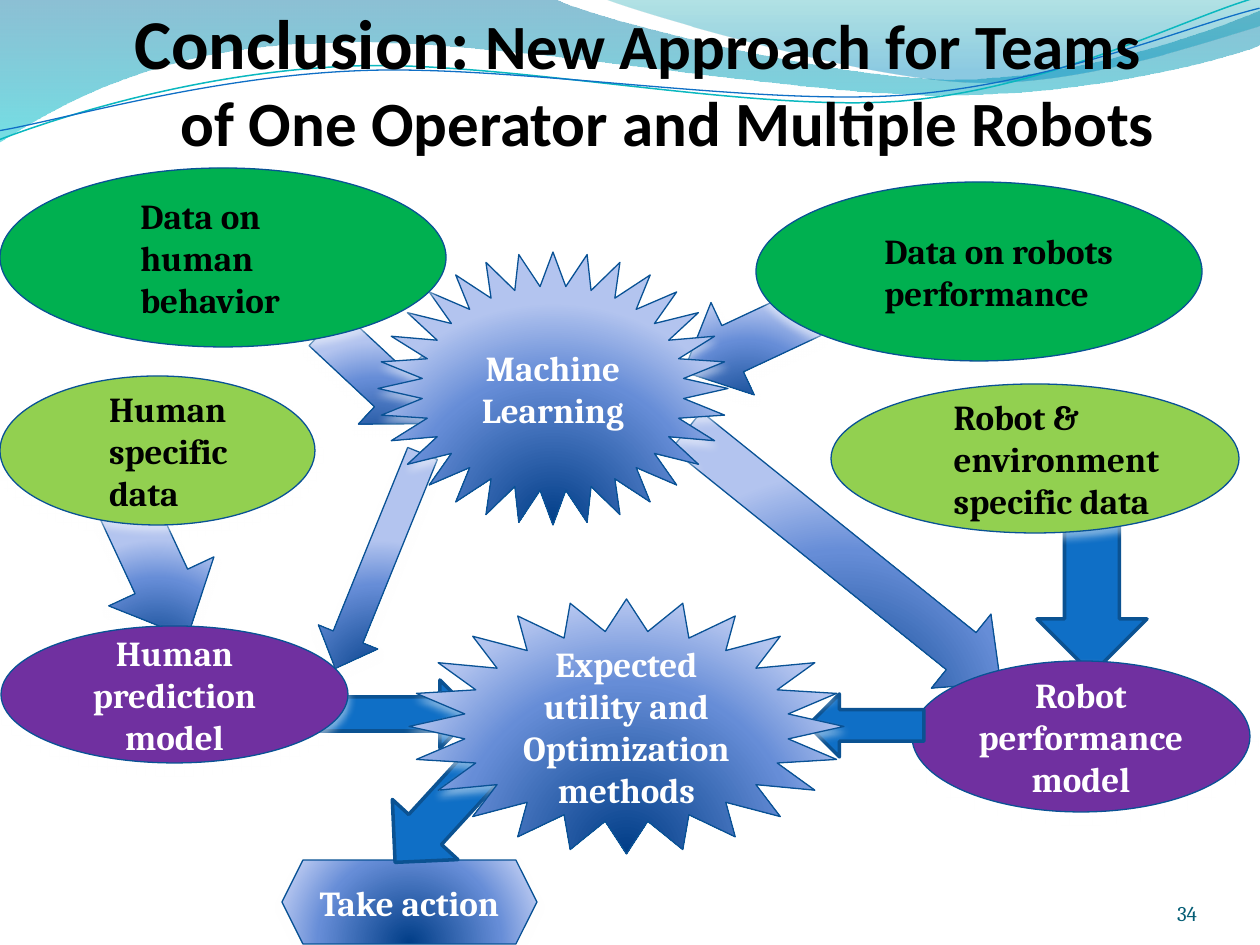
from lxml import etree
from pptx import Presentation
from pptx import util as u
from pptx.dml.color import RGBColor
from pptx.enum import shapes, text
from pptx.oxml import ns

EMU_PER_PX = 914400 / 126
COLORS = {
    "black": "000000", "white": "FFFFFF", "number": "045D75",
    "data": "00B050", "specific": "92D050", "model": "7030A0",
    "arrow": "0F6FC6", "arrow_edge": "0B5292", "edge": "095295",
    "shade": "FFFFFF", "teal_line": "0AB8BF", "blue_line": "0F6FC6",
}
GLOSS = [(0, "003D87", 100), (68, "668DD7", 100), (100, "B3C4EF", 100)]
WAVES = [
    ((0, 0), [[(554, -1)], [(600, 21), (837, 79), (955, 79)],
              [(1075, 79), (1207, 33), (1260, 11)], [(1261, 45)],
              [(1239, 55), (1096, 96), (940, 95)], [(784, 95), (481, 35), (324, 43)],
              [(163, 45), (58, 105), (-1, 142)], [(0, 0)]],
     [(0, "0074A1", 45), (100, "00C6CF", 55)]),
    ((604, -1), [[(641, 14), (859, 78), (969, 82)],
                 [(1079, 87), (1211, 40), (1260, 26)], [(1260, 0)], [(604, -1)]],
     [(0, "00A1A9", 30), (80, "008BBF", 45)]),
]
STRAND_TILT = 357.3
STRANDS = [
    ((-3, 110), [[(58, 90), (199, 52), (349, 53)], [(499, 53), (745, 118), (897, 114)],
                 [(1049, 109), (1184, 45), (1260, 27)]], "teal_line", 0.85),
    ((-3, 101), [[(57, 94), (207, 57), (357, 58)], [(508, 58), (750, 112), (902, 108)],
                 [(1053, 104), (1189, 52), (1262, 38)]], "blue_line", 0.75),
]
TITLE = [[("Conclusion: ", 40), ("New Approach for Teams \vof One Operator and Multiple Robots", 36)]]
PAGE_NUMBER = [[("34", 12)]]
DIAGRAM = [
    ("gloss", "DOWN_ARROW", (796, 355, 95, 403), 308.8, []),
    ("gloss", "DOWN_ARROW", (347, 445, 64, 232), 22.1, []),
    ("gloss", "HEXAGON", (282, 860, 255, 84), 0, ["Take action"]),
    ("gloss", "DOWN_ARROW", (696, 272, 102, 140), 64.9, []),
    ("data", "OVAL", (756, 182, 446, 179), 0, ["Data on robots performance"]),
    ("gloss", "DOWN_ARROW", (329, 306, 95, 140), 313, []),
    ("gloss", "DOWN_ARROW", (99, 500, 116, 144), 335, []),
    ("specific", "OVAL", (0, 376, 315, 149), 0, ["Human specific data"]),
    ("arrow", "DOWN_ARROW", (1037, 524, 110, 150), 0, []),
    ("specific", "OVAL", (831, 384, 408, 149), 0, ["Robot & environment specific data"]),
    ("model", "OVAL", (912, 661, 338, 151), 0, ["Robot performance model"]),
    ("arrow", "LEFT_ARROW", (808, 694, 116, 63), 0, []),
    ("arrow", "RIGHT_ARROW", (295, 680, 179, 68), 0, []),
    ("arrow", "LEFT_ARROW", (374, 770, 130, 89), 312.5, []),
    ("gloss", "STAR_32_POINT", (378, 252, 350, 273), 0, ["Machine Learning"]),
    ("model", "OVAL", (1, 626, 347, 137), 0, ["Human prediction model"]),
    ("data", "OVAL", (0, 168, 446, 179), 0, ["Data on human behavior"]),
    ("gloss", "STAR_24_POINT", (409, 599, 435, 255), 0,
     ["Expected utility and Optimization", "methods"]),
]


def px(value):
    return u.Emu(round(value * EMU_PER_PX))


def rgb(name):
    return RGBColor.from_string(COLORS[name])


def add_xml(parent, tag, **attributes):
    return etree.SubElement(parent, ns.qn(tag), {k: str(v) for k, v in attributes.items()})


def fill_gradient(shape, stops, radial):
    shape.fill.solid()
    properties = shape._element.spPr
    solid = properties.find(ns.qn("a:solidFill"))
    gradient = etree.Element(ns.qn("a:gradFill"), rotWithShape="1")
    stop_list = add_xml(gradient, "a:gsLst")
    for position, color, opacity in stops:
        stop = add_xml(stop_list, "a:gs", pos=position * 1000)
        tint = add_xml(stop, "a:srgbClr", val=color)
        if opacity < 100:
            add_xml(tint, "a:alpha", val=opacity * 1000)
    if radial:
        focus = add_xml(gradient, "a:path", path="circle")
        add_xml(focus, "a:fillToRect", l=50000, t=130000, r=50000, b=-30000)
    else:
        add_xml(gradient, "a:lin", ang=5400000, scaled=1)
    properties.replace(solid, gradient)


def add_shadow(shape):
    effects = shape._element.spPr.find(ns.qn("a:effectLst"))
    shadow = add_xml(effects, "a:outerShdw", blurRad=u.Pt(4.5), dist=u.Pt(3),
                     dir=5400000, rotWithShape=0)
    add_xml(add_xml(shadow, "a:srgbClr", val=COLORS["shade"]), "a:alpha", val=48000)


def write(shape, paragraphs, color="white", font="Cambria", bold=True, align="CENTER",
          anchor="MIDDLE", insets=(0, 6, 0, 6), indent=0):
    frame = shape.text_frame
    frame.word_wrap = True
    frame.vertical_anchor = text.MSO_ANCHOR[anchor]
    frame.margin_left, frame.margin_top, frame.margin_right, frame.margin_bottom = map(px, insets)
    for index, runs in enumerate(paragraphs):
        paragraph = frame.paragraphs[0] if index == 0 else frame.add_paragraph()
        paragraph.alignment = text.PP_ALIGN[align]
        if indent:
            paragraph.level = 1
            settings = paragraph._p.get_or_add_pPr()
            settings.set("marL", str(px(indent)))
            settings.set("indent", "0")
        for words, size in runs:
            for part, line in enumerate(words.split("\v")):
                if part:
                    paragraph.add_line_break()
                run = paragraph.add_run()
                run.text = line
                run.font.name, run.font.size, run.font.bold = font, u.Pt(size), bold
                run.font.color.rgb = rgb(color)


def trace(slide, start, segments, closed):
    builder = slide.shapes.build_freeform(px(start[0]), px(start[1]))
    points = [(px(x), px(y)) for segment in segments for x, y in segment]
    builder.add_line_segments(points, close=closed)
    shape = builder.convert_to_shape()
    shape.shadow.inherit = False
    steps = iter(list(shape._element.spPr.iter(ns.qn("a:lnTo"))))
    for segment in segments:
        group = [next(steps) for _ in segment]
        if len(group) == 3:
            curve = etree.Element(ns.qn("a:cubicBezTo"))
            group[0].addprevious(curve)
            for step in group:
                curve.append(step[0])
                step.getparent().remove(step)
    return shape


def add_part(slide, style, kind, box, rotation, lines):
    part = slide.shapes.add_shape(shapes.MSO_SHAPE[kind], *map(px, box))
    part.rotation = rotation
    part.shadow.inherit = False
    plain = style == "arrow"
    if style == "gloss":
        fill_gradient(part, GLOSS, radial=True)
        if kind == "DOWN_ARROW":
            part.adjustments[1] = 0.531
    else:
        part.fill.solid()
        part.fill.fore_color.rgb = rgb(style)
    part.line.color.rgb = rgb("arrow_edge" if plain else "edge")
    part.line.width = u.Pt(2 if plain else 0.75)
    if not plain:
        add_shadow(part)
    if lines:
        indented = style in ("data", "specific")
        layout = dict(color="black", align="LEFT", indent=63) if indented else {}
        if lines == ["Data on human behavior"]:
            layout["insets"] = (12, 6, 12, 6)
        write(part, [[(line, 20)] for line in lines], **layout)


def main():
    deck = Presentation()
    deck.slide_width, deck.slide_height = px(1260), px(945)
    slide = deck.slides.add_slide(deck.slide_layouts[6])
    for start, segments, stops in WAVES:
        wave = trace(slide, start, segments, closed=True)
        fill_gradient(wave, stops, radial=False)
        wave.line.fill.background()
    for start, segments, color, width in STRANDS:
        strand = trace(slide, start, segments, closed=False)
        strand.rotation = STRAND_TILT
        strand.fill.background()
        strand.line.color.rgb = rgb(color)
        strand.line.width = u.Pt(width)
    add_part(slide, *DIAGRAM[0])
    title = slide.shapes.add_textbox(*map(px, (21, 62, 1134, 97)))
    write(title, TITLE, color="black", font="Calibri", align="RIGHT", anchor="BOTTOM",
          insets=(0, 6, 0, 0))
    number = slide.shapes.add_textbox(*map(px, (1092, 876, 105, 50)))
    write(number, PAGE_NUMBER, color="number", bold=False, align="RIGHT", anchor="BOTTOM",
          insets=(0, 0, 0, 0))
    for part in DIAGRAM[1:]:
        add_part(slide, *part)
    deck.save("out.pptx")


if __name__ == "__main__":
    main()
